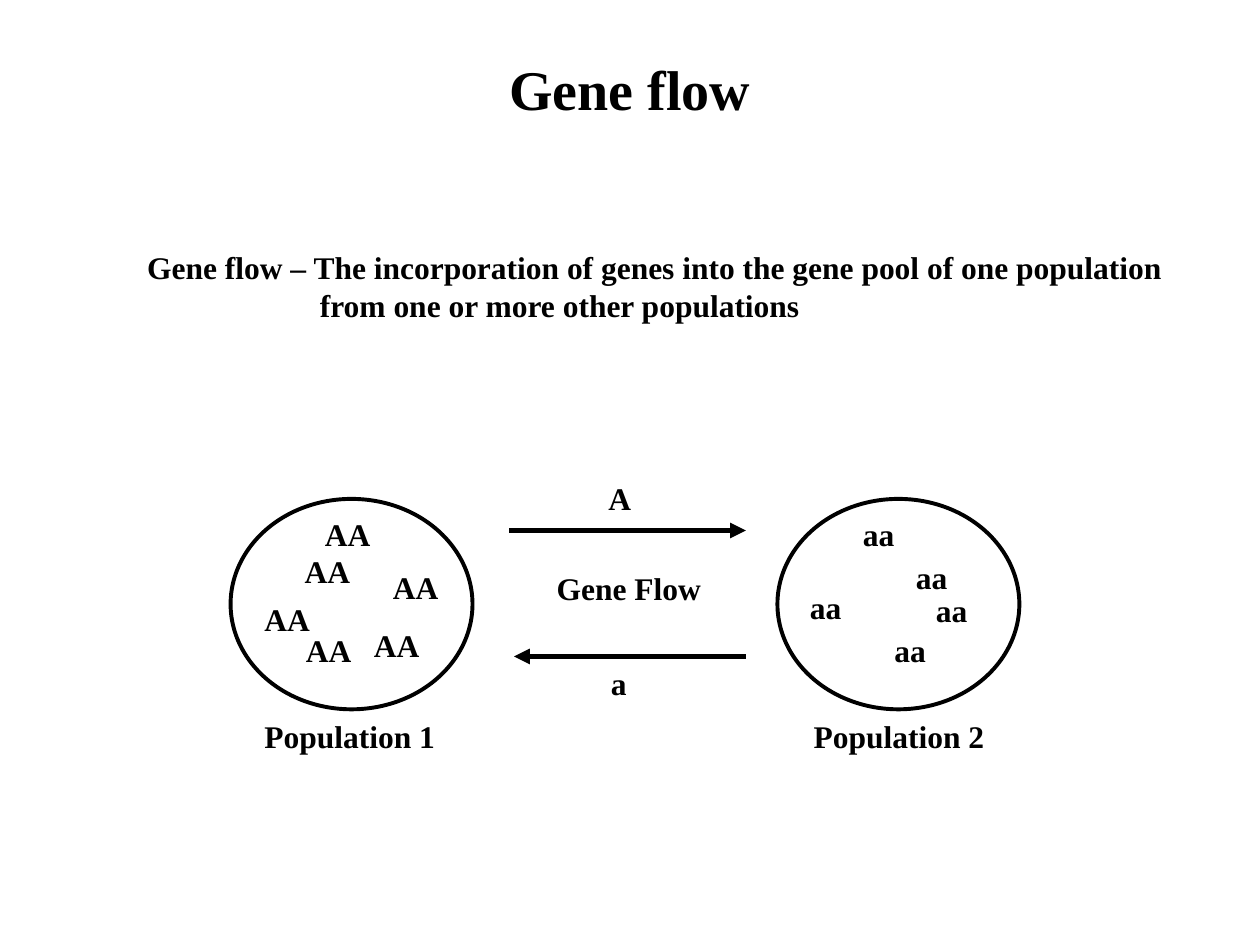
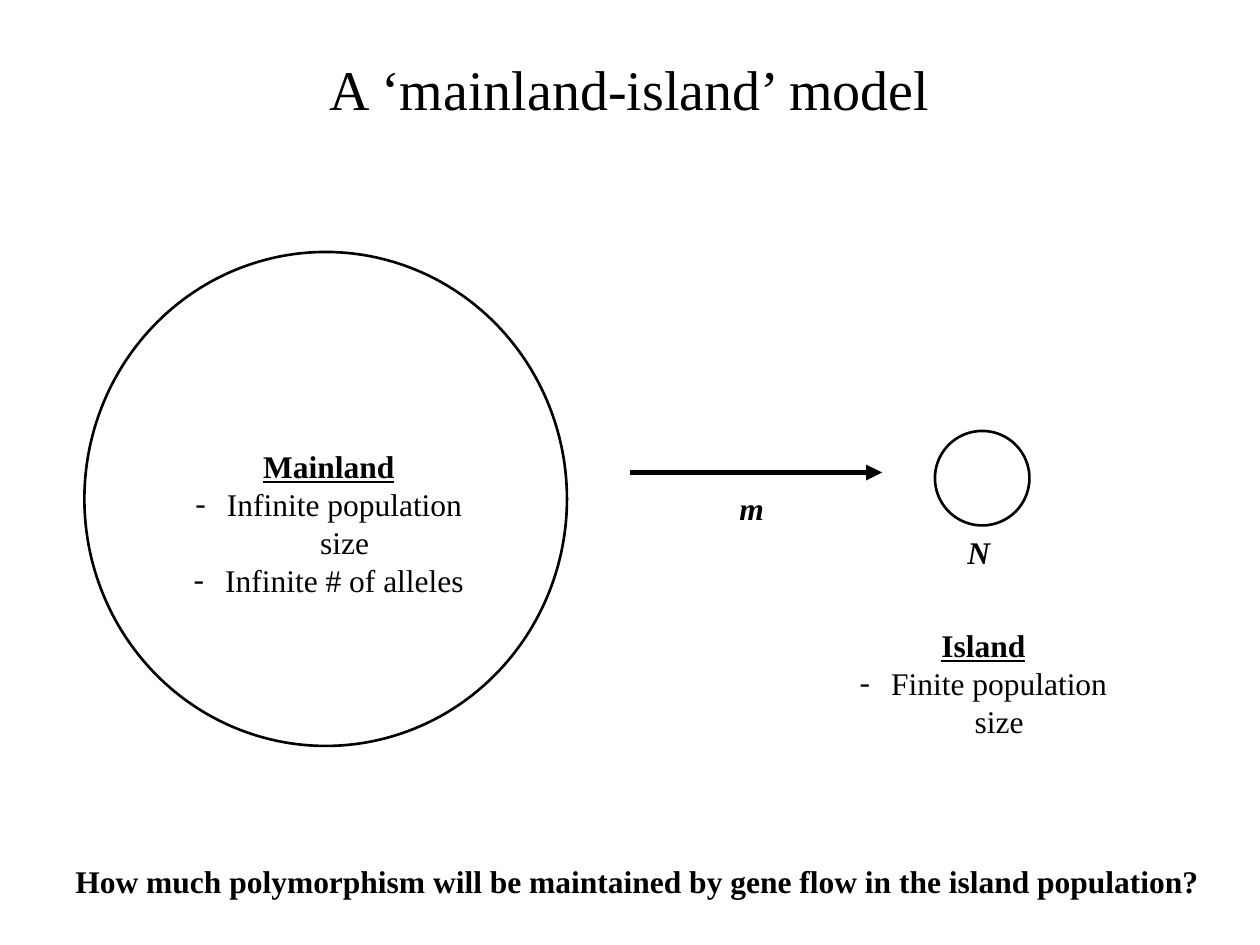
from lxml.etree import SubElement
from pptx import Presentation
from pptx.dml.color import RGBColor
from pptx.enum.shapes import MSO_CONNECTOR, MSO_SHAPE
from pptx.enum.text import MSO_ANCHOR, MSO_AUTO_SIZE, PP_ALIGN
from pptx.oxml.ns import qn
from pptx.util import Pt

PX = 9144
FONT = "Times New Roman"
COLORS = {"ink": "000000", "paper": "FFFFFF"}
TITLE_BOX = (0, 38, 1000, 63)
LINE_HEIGHT = 40
TITLE_ONLY, TWO_CONTENT = 5, 3


def color(name):
    return RGBColor.from_string(COLORS[name])


def emu(*lengths):
    return [length * PX for length in lengths]


def format_paragraph(paragraph, size=18, bold=False, italic=False, underline=False):
    for run in paragraph.runs:
        font = run.font
        font.name, font.size = FONT, Pt(size)
        font.bold, font.italic, font.underline = bold, italic, underline
        font.color.rgb = color("ink")


def place(shape, box):
    shape.left, shape.top, shape.width, shape.height = emu(*box)


def add_titled_slide(presentation, layout, text, bold):
    slide = presentation.slides.add_slide(presentation.slide_layouts[layout])
    slide.background.fill.solid()
    slide.background.fill.fore_color.rgb = color("paper")
    title = slide.shapes.title
    place(title, TITLE_BOX)
    frame = title.text_frame
    frame.text = text
    frame.auto_size = MSO_AUTO_SIZE.NONE
    frame.vertical_anchor = MSO_ANCHOR.TOP
    paragraph = frame.paragraphs[0]
    paragraph.alignment = PP_ALIGN.CENTER
    format_paragraph(paragraph, 32, bold)
    return slide


def add_label(slide, left, top, width, text, height=LINE_HEIGHT, italic=False):
    label = slide.shapes.add_textbox(*emu(left, top, width, height))
    frame = label.text_frame
    frame.word_wrap = False
    frame.text = text
    for paragraph in frame.paragraphs:
        format_paragraph(paragraph, bold=True, italic=italic)
    return label


def add_ellipse(slide, box, weight):
    ellipse = slide.shapes.add_shape(MSO_SHAPE.OVAL, *emu(*box))
    ellipse.shadow.inherit = False
    ellipse.fill.background()
    ellipse.line.color.rgb = color("ink")
    ellipse.line.width = Pt(weight)


def add_arrow(slide, start, end, y):
    arrow = slide.shapes.add_connector(MSO_CONNECTOR.STRAIGHT, *emu(start, y, end, y))
    arrow.line.color.rgb = color("ink")
    arrow.line.width = Pt(3)
    SubElement(arrow.line._get_or_add_ln(), qn("a:tailEnd"), type="triangle")
    SubElement(arrow._element.spPr, qn("a:effectLst"))


def add_definition(slide, box):
    left, top, width, height = box
    text = ("Gene flow – The incorporation of genes into the gene pool of one population\n"
            "from one or more other populations")
    definition = add_label(slide, left, top, width, text, height)
    continuation = definition.text_frame.paragraphs[1]
    continuation._p.get_or_add_pPr().set("marL", str(137 * PX))


def add_population(slide, box, name, name_offset, genotype, genotype_width, offsets):
    left, top, width, height = box
    add_ellipse(slide, box, 2.25)
    add_label(slide, left + name_offset, top + height + 1, 156, name)
    for x, y in offsets:
        add_label(slide, left + x, top + y, genotype_width, genotype)


def add_exchange(slide, box):
    left, top, width, height = box
    right, bottom = left + width, top + height
    add_arrow(slide, left, right, top)
    add_arrow(slide, right, left + 4, bottom)
    add_label(slide, left + 69, top - 46, 38, "A")
    add_label(slide, left + 28, top + 26, 135, "Gene Flow")
    add_label(slide, left + 71, bottom + 1, 33, "a")


def add_feature_list(placeholder, box, heading, features):
    place(placeholder, box)
    frame = placeholder.text_frame
    frame.text = "\n".join([heading, *features])
    frame.word_wrap = True
    frame.auto_size = MSO_AUTO_SIZE.NONE
    frame.vertical_anchor = MSO_ANCHOR.TOP
    for index, paragraph in enumerate(frame.paragraphs):
        is_heading = index == 0
        paragraph.alignment = PP_ALIGN.CENTER
        paragraph.space_before = Pt(0)
        format_paragraph(paragraph, bold=is_heading, underline=is_heading)
        indent = 0 if is_heading else 25 * PX
        properties = paragraph._p.get_or_add_pPr()
        properties.set("marL", str(indent))
        properties.set("indent", str(-indent))
        if is_heading:
            SubElement(properties, qn("a:buNone"))
        else:
            SubElement(properties, qn("a:buFont"), typeface=FONT)
            SubElement(properties, qn("a:buChar"), char="-")


def add_mainland(slide, box):
    left, top, width, height = box
    add_ellipse(slide, box, 1.5)
    add_feature_list(slide.placeholders[1], (left + 64, top + 150, 260, 160), "Mainland",
                     ["Infinite population size", "Infinite # of alleles"])


def add_island(slide, box):
    left, top, width, height = box
    add_ellipse(slide, box, 1.5)
    add_label(slide, left + 16, top + height + 1, 38, "N", italic=True)
    add_feature_list(slide.placeholders[2], (left - 84, top + 150, 245, 100), "Island",
                     ["Finite population size"])


def add_migration(slide, left, y, length):
    add_arrow(slide, left, left + length, y)
    add_label(slide, left + 77, y + 8, 40, "m", italic=True)


def build_gene_flow(presentation):
    slide = add_titled_slide(presentation, TITLE_ONLY, "Gene flow", True)
    add_definition(slide, (107, 192, 826, 70))
    add_population(slide, (183, 396, 192, 167), "Population 1", 17, "AA", 56,
                   [(65, 8), (49, 37), (119, 50), (17, 75), (50, 100), (104, 96)])
    add_population(slide, (617, 396, 192, 167), "Population 2", 19, "aa", 45,
                   [(58, 8), (100, 42), (16, 66), (116, 68), (83, 100)])
    add_exchange(slide, (404, 421, 188, 100))


def build_mainland_island(presentation):
    slide = add_titled_slide(presentation, TWO_CONTENT, "A ‘mainland-island’ model", False)
    add_mainland(slide, (67, 200, 383, 392))
    add_island(slide, (742, 342, 75, 75))
    add_migration(slide, 500, 375, 200)
    add_label(slide, 50, 679, 912,
              "How much polymorphism will be maintained by gene flow in the island population?")


def main():
    presentation = Presentation()
    presentation.slide_width, presentation.slide_height = emu(1000, 750)
    build_gene_flow(presentation)
    build_mainland_island(presentation)
    presentation.save("out.pptx")


if __name__ == "__main__":
    main()
